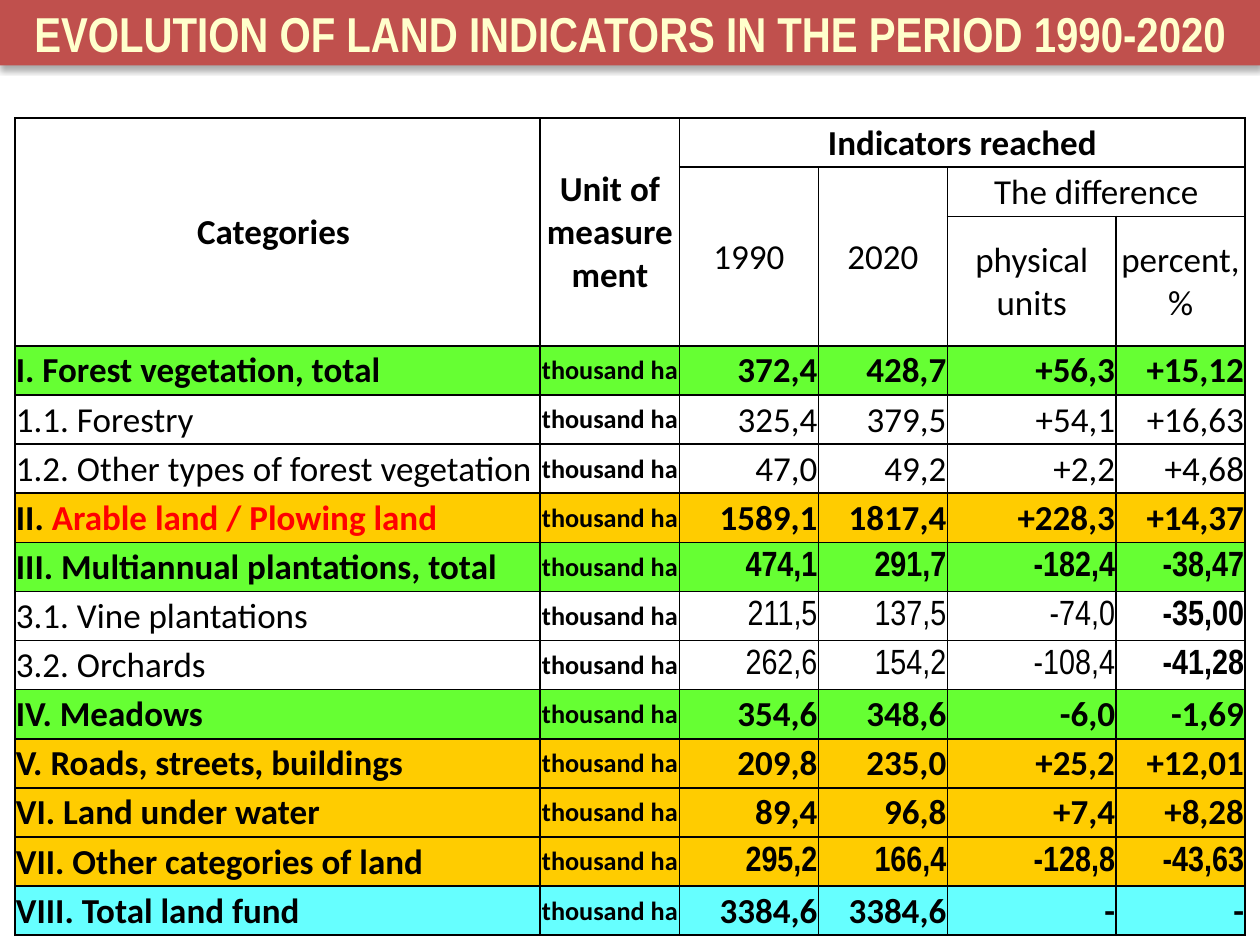
from dataclasses import dataclass

from lxml.etree import SubElement
from pptx import Presentation
from pptx.dml.color import RGBColor
from pptx.enum.text import MSO_ANCHOR, MSO_AUTO_SIZE, PP_ALIGN
from pptx.oxml.ns import qn
from pptx.util import Cm, Pt

COLORS = {
    "black": "000000", "white": "FFFFFF", "red": "FF0000", "cream": "FFFFCC",
    "brick": "C0504D", "green": "66FF33", "gold": "FFCC00", "cyan": "66FFFF",
}
SANS, NARROW = "Calibri", "Arial Narrow"
WIDTHS = (10.59, 2.81, 2.8, 2.6, 3.4, 2.6)
ROW, DEEP = 0.99, 1.93


@dataclass
class Head:
    text: str
    row: int
    col: int
    rows: int = 1
    cols: int = 1
    bold: bool = False


@dataclass
class Line:
    name: str
    values: str
    fill: str = "white"
    font: str = SANS
    accent: str = ""

    @property
    def bold(self) -> bool:
        return self.fill != "white"


HEADS = [
    Head("Categories ", 0, 0, rows=3, bold=True),
    Head("Unit of measurement", 0, 1, rows=3, bold=True),
    Head("Indicators reached", 0, 2, cols=4, bold=True),
    Head("1990", 1, 2, rows=2),
    Head("2020", 1, 3, rows=2),
    Head("The difference", 1, 4, cols=2),
    Head("physical units", 2, 4),
    Head("percent, %", 2, 5),
]
LINES = [
    Line("I. Forest vegetation, total", "372,4 428,7 +56,3 +15,12", "green"),
    Line("1.1. Forestry", "325,4 379,5 +54,1 +16,63"),
    Line("1.2. Other types of forest vegetation", "47,0 49,2 +2,2 +4,68"),
    Line("II. ", "1589,1 1817,4 +228,3 +14,37", "gold",
         accent="Arable land / Plowing land"),
    Line("III. Multiannual plantations, total", "474,1 291,7 -182,4 -38,47",
         "green", NARROW),
    Line("3.1. Vine plantations", "211,5 137,5 -74,0 -35,00", font=NARROW),
    Line("3.2. Orchards", "262,6 154,2 -108,4 -41,28", font=NARROW),
    Line("IV. Meadows", "354,6 348,6 -6,0 -1,69", "green"),
    Line("V. Roads, streets, buildings", "209,8 235,0 +25,2 +12,01", "gold"),
    Line("VI. Land under water", "89,4 96,8 +7,4 +8,28", "gold"),
    Line("VII. Other categories of land", "295,2 166,4 -128,8 -43,63",
         "gold", NARROW),
    Line("VIII. Total land fund", "3384,6 3384,6 - -", "cyan"),
]
TOP = 3  # header rows


def tint(name: str) -> RGBColor:
    return RGBColor.from_string(COLORS[name])


def style(run, size: float, bold: bool, font: str = SANS,
          color: str = "black") -> None:
    run.font.size, run.font.bold, run.font.name = Pt(size), bold, font
    run.font.color.rgb = tint(color)


def frame(cell, fill: str) -> None:
    """Give a cell its borders, fill and margins."""
    props = cell._tc.get_or_add_tcPr()
    for side in ("lnL", "lnR", "lnT", "lnB"):
        edge = SubElement(props, qn(f"a:{side}"), w=str(Pt(1)))
        solid = SubElement(edge, qn("a:solidFill"))
        SubElement(solid, qn("a:srgbClr"), val=COLORS["black"])
    cell.fill.solid()
    cell.fill.fore_color.rgb = tint(fill)
    cell.margin_left = cell.margin_right = cell.margin_top = Cm(0.02)
    cell.margin_bottom = 0
    cell.vertical_anchor = MSO_ANCHOR.MIDDLE


def write(cell, text: str, align: PP_ALIGN, bold: bool, size: float = 20,
          font: str = SANS) -> None:
    para = cell.text_frame.paragraphs[0]
    para.text, para.alignment = text, align
    style(para.runs[0], size, bold, font)


def add_title(slide) -> None:
    title = slide.shapes.title
    title.left, title.top, title.width, title.height = 0, 0, Cm(25.4), Cm(1.32)
    title.fill.solid()
    title.fill.fore_color.rgb = tint("brick")
    body = title.text_frame
    body.text = "EVOLUTION OF LAND INDICATORS IN THE PERIOD 1990-2020"
    body.auto_size = MSO_AUTO_SIZE.NONE
    body.vertical_anchor = MSO_ANCHOR.MIDDLE
    body.paragraphs[0].alignment = PP_ALIGN.CENTER
    style(body.paragraphs[0].runs[0], 28, True, NARROW, "cream")
    effects = SubElement(title._element.spPr, qn("a:effectLst"))
    shade = SubElement(effects, qn("a:outerShdw"), blurRad=str(Pt(3.5)),
                       dist=str(Pt(2.2)), dir="5400000", rotWithShape="0")
    black = SubElement(shade, qn("a:srgbClr"), val=COLORS["black"])
    SubElement(black, qn("a:alpha"), val="32000")


def add_grid(slide):
    count = TOP + len(LINES)
    heights = [DEEP if row == TOP - 1 else ROW for row in range(count)]
    table = slide.shapes.add_table(
        count, len(WIDTHS), Cm(0.3), Cm(2.38),
        Cm(sum(WIDTHS)), Cm(sum(heights))).table
    table.first_row = table.horz_banding = False
    for col, width in zip(table.columns, WIDTHS):
        col.width = Cm(width)
    for row, height in zip(table.rows, heights):
        row.height = Cm(height)
    fills = ["white"] * TOP + [line.fill for line in LINES]
    for row, fill in zip(table.rows, fills):
        for cell in row.cells:
            frame(cell, fill)
    return table


def add_head(table, head: Head) -> None:
    cell = table.cell(head.row, head.col)
    if head.rows * head.cols > 1:
        cell.merge(table.cell(head.row + head.rows - 1,
                              head.col + head.cols - 1))
    write(cell, head.text, PP_ALIGN.CENTER, head.bold)


def add_line(table, row: int, line: Line) -> None:
    name, unit, *cells = table.rows[row].cells
    write(name, line.name, PP_ALIGN.JUSTIFY, line.bold)
    if line.accent:
        run = name.text_frame.paragraphs[0].add_run()
        run.text = line.accent
        style(run, 20, line.bold, color="red")
    write(unit, "thousand ha", PP_ALIGN.CENTER, True, 15)
    for cell, value in zip(cells, line.values.split()):
        # Percentages in the narrow font are always bold.
        strong = line.bold or (line.font == NARROW and cell is cells[-1])
        write(cell, value, PP_ALIGN.RIGHT, strong, font=line.font)


def main() -> None:
    deck = Presentation()
    deck.slide_width, deck.slide_height = Cm(25.4), Cm(19.05)
    slide = deck.slides.add_slide(deck.slide_layouts[5])
    add_title(slide)
    table = add_grid(slide)
    for head in HEADS:
        add_head(table, head)
    for row, line in enumerate(LINES, TOP):
        add_line(table, row, line)
    deck.save("out.pptx")


if __name__ == "__main__":
    main()
